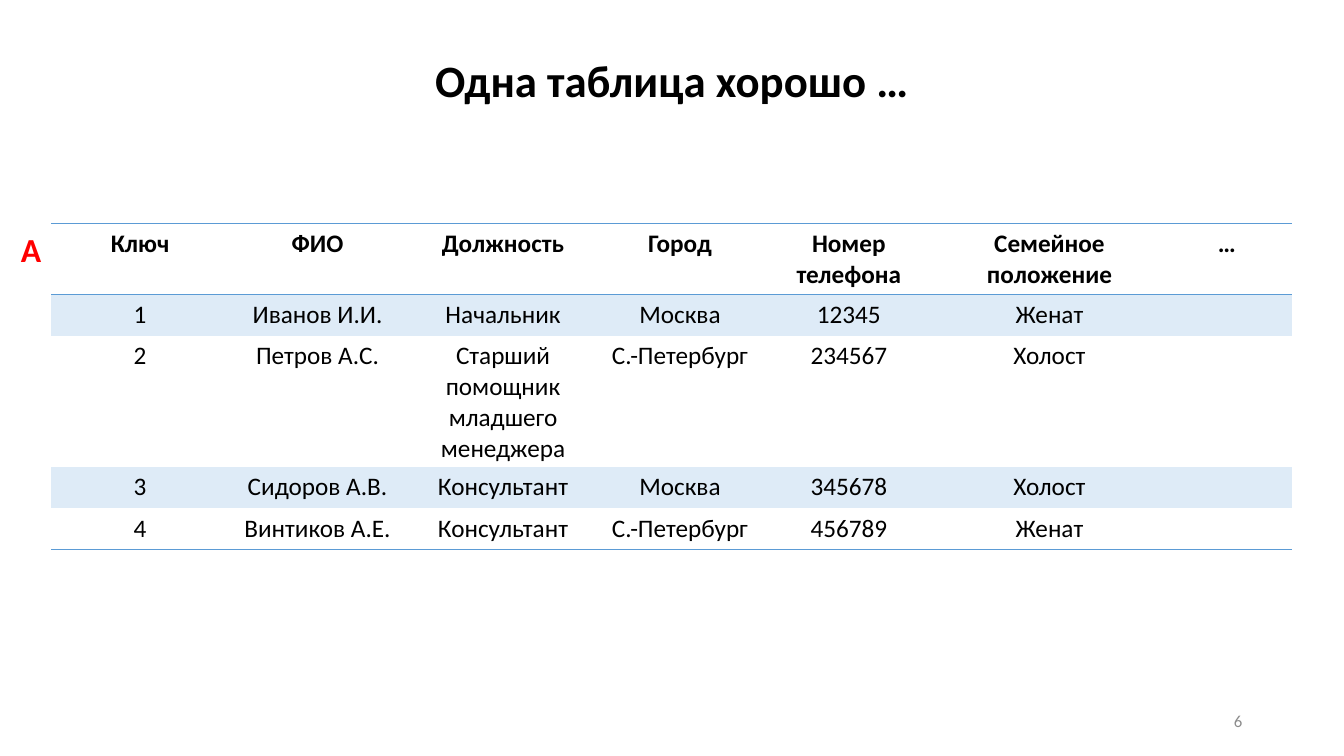
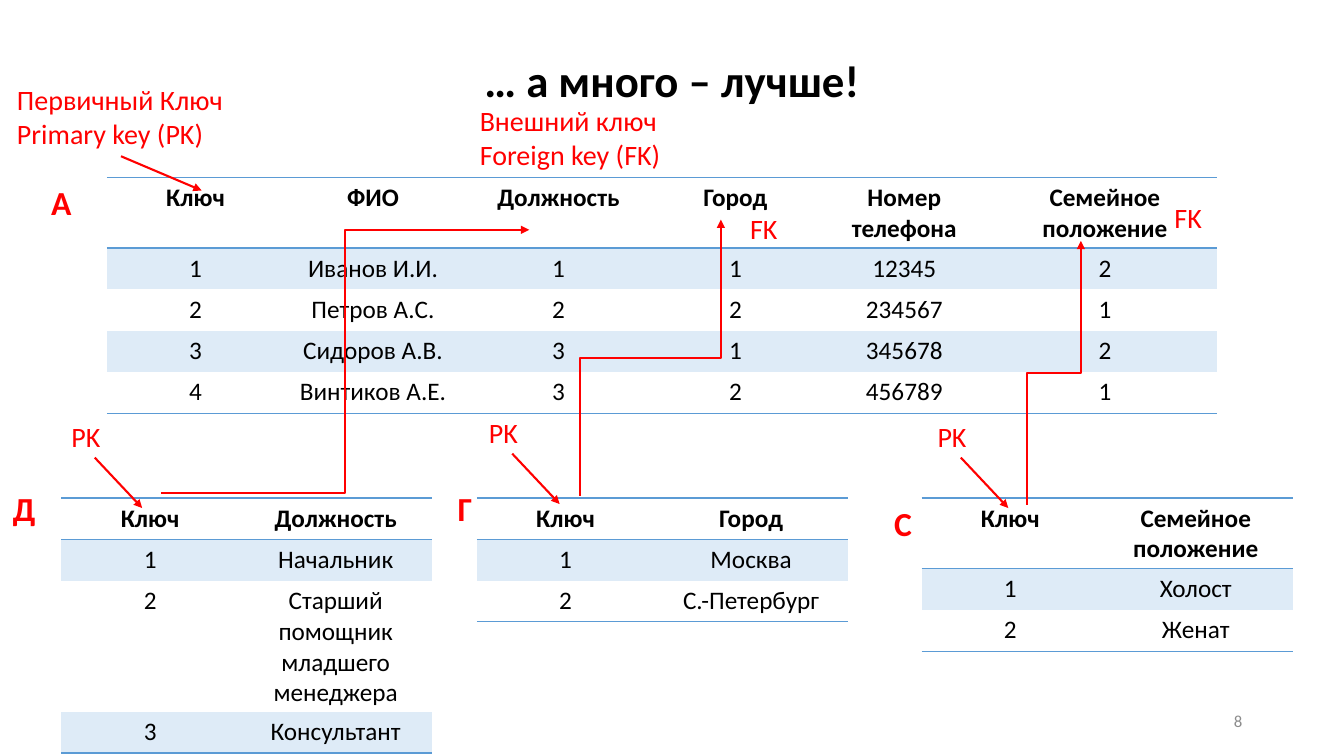
from pptx import Presentation
from pptx.dml.color import RGBColor
from pptx.enum.shapes import MSO_CONNECTOR
from pptx.enum.text import MSO_ANCHOR, MSO_AUTO_SIZE, PP_ALIGN
from pptx.oxml.ns import qn
from pptx.util import Pt
from lxml.etree import SubElement

PX = 9144
WIDTH, HEIGHT = 1333, 750
FONT = "Calibri"
BLACK = RGBColor(0x00, 0x00, 0x00)
RED = RGBColor(0xFF, 0x00, 0x00)
GREY = RGBColor(0x8C, 0x8C, 0x8C)
BLUE = RGBColor(0x5B, 0x9B, 0xD5)
PALE_BLUE = RGBColor(0xDE, 0xEB, 0xF7)
NO_GRID_STYLE = "{2D5ABB26-0587-4C30-8999-92F81FD0307C}"

ROW_HEIGHT = 41
STAFF_COLUMNS = [176, 176, 192, 159, 176, 222]
LOOKUP_COLUMNS = [176, 192]
STAFF_HEADER = ["Ключ", "ФИО", "Должность", "Город", "Номер телефона", "Семейное положение"]
SENIOR = "Старший помощник младшего менеджера"

FULL_STAFF = [
    STAFF_HEADER + ["…"],
    ["1", "Иванов И.И.", "Начальник", "Москва", "12345", "Женат", ""],
    ["2", "Петров А.С.", SENIOR, "С.-Петербург", "234567", "Холост", ""],
    ["3", "Сидоров А.В.", "Консультант", "Москва", "345678", "Холост", ""],
    ["4", "Винтиков А.Е.", "Консультант", "С.-Петербург", "456789", "Женат", ""],
]
KEYED_STAFF = [
    STAFF_HEADER,
    ["1", "Иванов И.И.", "1", "1", "12345", "2"],
    ["2", "Петров А.С.", "2", "2", "234567", "1"],
    ["3", "Сидоров А.В.", "3", "1", "345678", "2"],
    ["4", "Винтиков А.Е.", "3", "2", "456789", "1"],
]
LOOKUPS = [
    ("Д", 61, (3, 479), (61, 411), ["Должность", "Начальник", SENIOR, "Консультант"]),
    ("Г", 473, (444, 479), (475, 407), ["Город", "Москва", "С.-Петербург"]),
    ("С", 914, (877, 494), (920, 411), ["Семейное положение", "Холост", "Женат"]),
]


def style(para, size, color, bold=False, align=PP_ALIGN.LEFT):
    para.alignment = align
    para.font.name = FONT
    para.font.size = Pt(size)
    para.font.bold = bold
    para.font.color.rgb = color


def add_text(page, place, lines, size, color, bold=False, align=PP_ALIGN.LEFT, wrap=False):
    box = page.shapes.add_textbox(*(value * PX for value in place))
    frame = box.text_frame
    frame.word_wrap = wrap
    frame.auto_size = MSO_AUTO_SIZE.SHAPE_TO_FIT_TEXT
    frame.text = "\n".join(lines)
    for para in frame.paragraphs:
        style(para, size, color, bold, align)
    return frame


def add_frame(deck, title, number):
    page = deck.slides.add_slide(deck.slide_layouts[6])
    add_text(page, (0, 47, WIDTH, 64), [title], 32, BLACK, True, PP_ALIGN.CENTER, True)
    footer = add_text(page, (942, 695, 300, 40), [number], 12, GREY, align=PP_ALIGN.RIGHT, wrap=True)
    footer.auto_size = MSO_AUTO_SIZE.NONE
    footer.vertical_anchor = MSO_ANCHOR.MIDDLE
    return page


def add_borders(cell, sides):
    properties = cell._tc.get_or_add_tcPr()
    for index, side in enumerate(sides):
        border = SubElement(properties, qn("a:" + side), w=str(Pt(1)))
        fill = SubElement(border, qn("a:solidFill"))
        SubElement(fill, qn("a:srgbClr"), val=str(BLUE))
        properties.insert(index, border)


def add_grid(page, left, top, columns, rows):
    holder = page.shapes.add_table(
        len(rows), len(columns), left * PX, top * PX,
        sum(columns) * PX, len(rows) * ROW_HEIGHT * PX)
    grid = holder.table
    grid.first_row = grid.horz_banding = False
    next(holder._element.iter(qn("a:tableStyleId"))).text = NO_GRID_STYLE
    for column, width in zip(grid.columns, columns):
        column.width = width * PX
    for row_index, row in enumerate(rows):
        for column_index, text in enumerate(row):
            cell = grid.cell(row_index, column_index)
            cell.text = text
            style(cell.text_frame.paragraphs[0], 18, BLACK, row_index == 0, PP_ALIGN.CENTER)
            if row_index % 2:
                cell.fill.solid()
                cell.fill.fore_color.rgb = PALE_BLUE
            else:
                cell.fill.background()
            if row_index == 0:
                add_borders(cell, ["lnT", "lnB"])
            elif row_index == len(rows) - 1:
                add_borders(cell, ["lnB"])


def add_arrow(page, start, end, kind=MSO_CONNECTOR.STRAIGHT):
    arrow = page.shapes.add_connector(kind, *(value * PX for value in (*start, *end)))
    arrow.line.color.rgb = RED
    arrow.line.width = Pt(1.5)
    SubElement(arrow.line._get_or_add_ln(), qn("a:tailEnd"), type="triangle")
    SubElement(arrow._element.spPr, qn("a:effectLst"))
    return arrow


def add_rising_arrow(page, start, end):
    center_x, center_y = (start[0] + end[0]) / 2, (start[1] + end[1]) / 2
    half_length, half_shift = (start[1] - end[1]) / 2, (end[0] - start[0]) / 2
    arrow = add_arrow(
        page, (center_x + half_length, center_y + half_shift),
        (center_x - half_length, center_y - half_shift), MSO_CONNECTOR.ELBOW)
    arrow._element.spPr.find(qn("a:xfrm")).set("rot", str(90 * 60000))


def add_table_letter(page, left, top, letter):
    add_text(page, (left, top, 40, 50), [letter], 24, RED, True)


def add_key_label(page, left, top, width, lines):
    add_text(page, (left, top, width, 11 + 33 * len(lines)), lines, 20, RED)


def add_lookup(page, letter, left, letter_place, key_place, values):
    keys = ["Ключ"] + [str(key) for key in range(1, len(values))]
    add_grid(page, left, 494, LOOKUP_COLUMNS, list(zip(keys, values)))
    add_table_letter(page, *letter_place, letter)
    key_left, key_top = key_place
    add_key_label(page, key_left, key_top, 49, ["PK"])
    add_arrow(page, (key_left + 33, key_top + 43), (key_left + 80, key_top + 93))


def build_single_table(deck):
    page = add_frame(deck, "Одна таблица хорошо …", "6")
    add_grid(page, 51, 222, STAFF_COLUMNS + [130], FULL_STAFF)
    add_table_letter(page, 11, 222, "А")


def build_linked_tables(deck):
    page = add_frame(deck, "… а много – лучше!", "8")
    add_grid(page, 106, 176, STAFF_COLUMNS, KEYED_STAFF)
    add_table_letter(page, 41, 176, "А")
    for lookup in LOOKUPS:
        add_lookup(page, *lookup)
    add_key_label(page, 7, 77, 226, ["Первичный Ключ", "Primary key (PK)"])
    add_arrow(page, (120, 155), (200, 189))
    add_key_label(page, 466, 98, 201, ["Внешний ключ", "Foreign key (FK)"])
    add_key_label(page, 734, 205, 48, ["FK"])
    add_key_label(page, 1155, 194, 48, ["FK"])
    add_arrow(page, (160, 489), (525, 228), MSO_CONNECTOR.ELBOW)
    add_rising_arrow(page, (575, 492), (715, 218))
    add_rising_arrow(page, (1019, 501), (1072, 239))


def main():
    deck = Presentation()
    deck.slide_width, deck.slide_height = WIDTH * PX, HEIGHT * PX
    build_single_table(deck)
    build_linked_tables(deck)
    deck.save("out.pptx")


if __name__ == "__main__":
    main()
